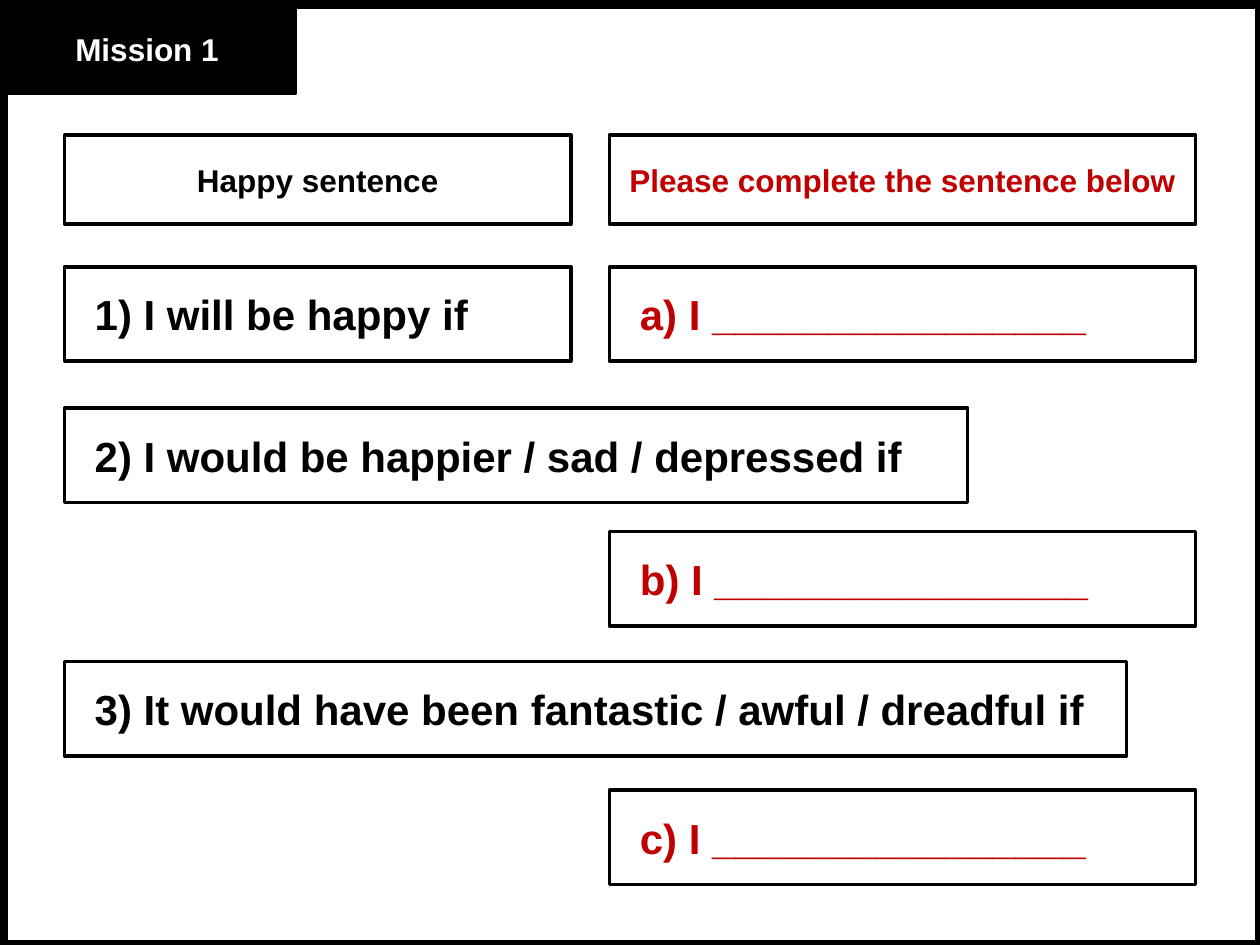
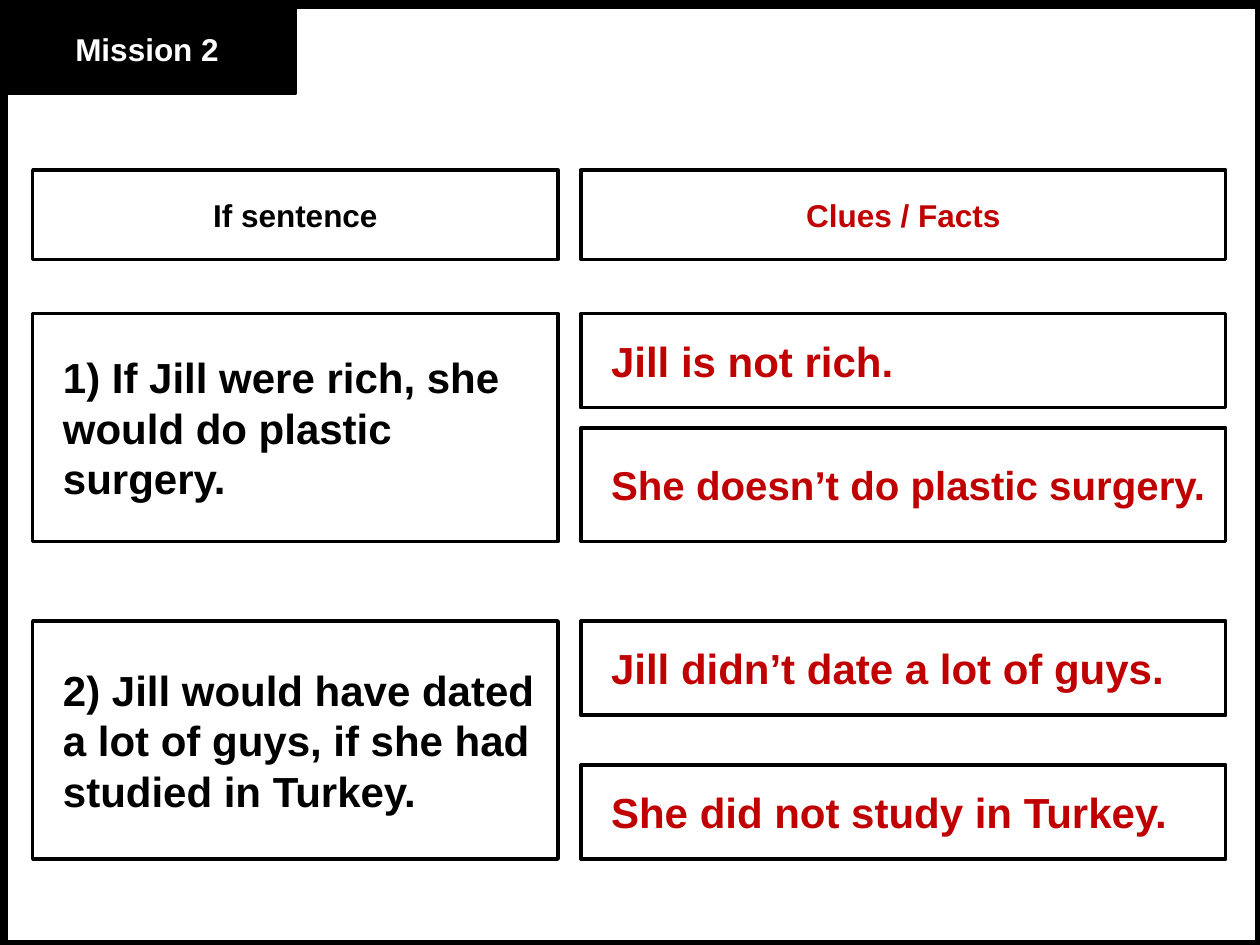
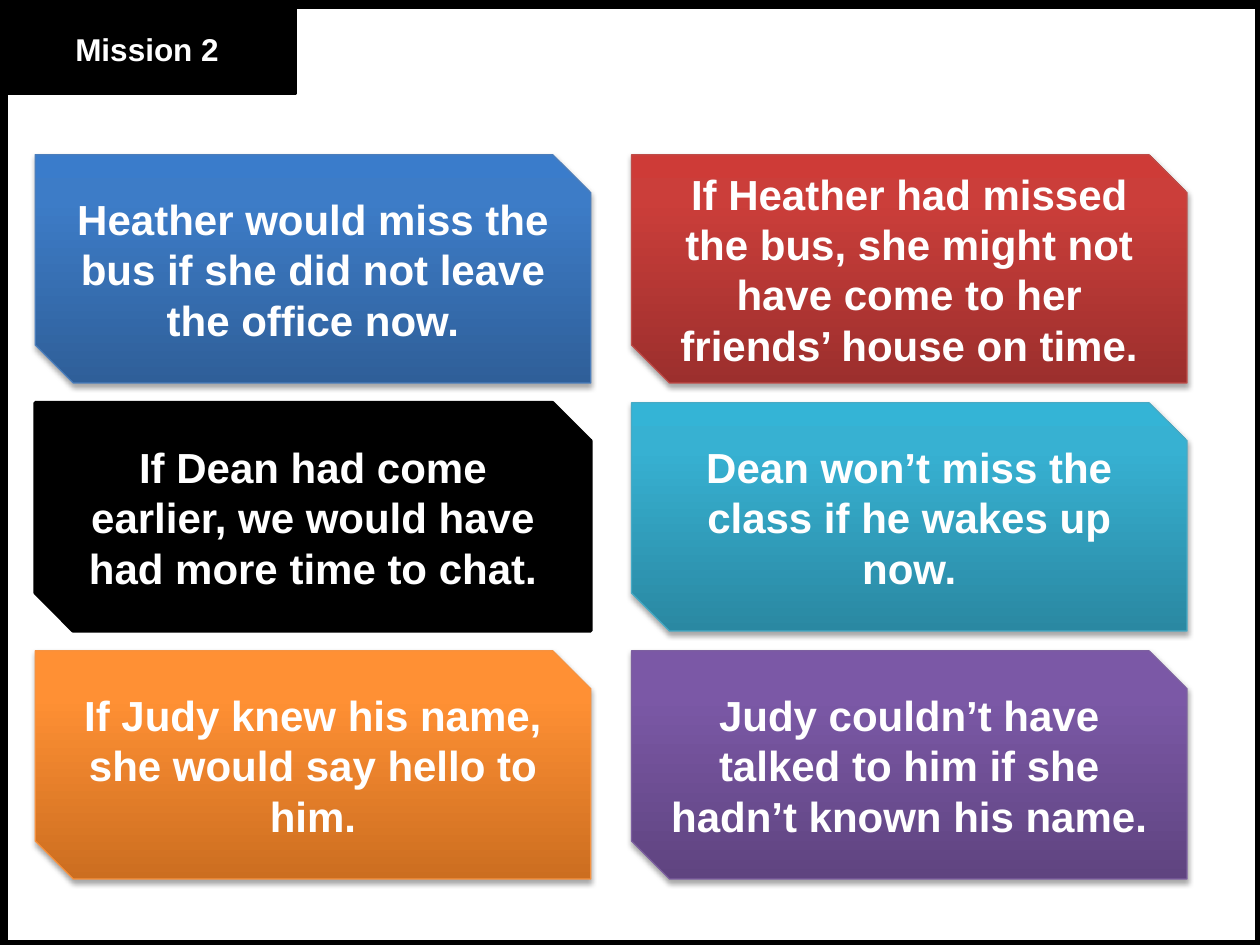
import copy

import lxml.etree
import pptx
import pptx.dml.color
import pptx.enum.shapes
import pptx.enum.text
import pptx.oxml.ns
import pptx.util

Cm = pptx.util.Cm
Pt = pptx.util.Pt
RGB = pptx.dml.color.RGBColor.from_string
qn = pptx.oxml.ns.qn
SHAPE = pptx.enum.shapes.MSO_SHAPE
ALIGN = pptx.enum.text.PP_ALIGN


class Theme:
    font = "Arial"
    black = "000000"
    white = "FFFFFF"
    red = "C00000"
    label_size = 18
    body_size = 24
    tight_size = 23
    outline = 2
    frame_outline = 6
    card_outline = 0.75
    label_height = 1.8
    row_height = 1.9
    indent = 0.61


def add_box(s, x, y, w, h, text="", color=Theme.black, fill=Theme.white, size=Theme.body_size,
            centred=False, shape=SHAPE.RECTANGLE, outline=Theme.outline):
    sp = s.shapes.add_shape(shape, Cm(x), Cm(y), Cm(w), Cm(h))
    sp.shadow.inherit = False
    sp.line.color.rgb = RGB(Theme.black)
    sp.line.width = Pt(outline)
    if fill is None:
        sp.fill.background()
    else:
        sp.fill.solid()
        sp.fill.fore_color.rgb = RGB(fill)
    if text:
        tf = sp.text_frame
        tf.word_wrap = True
        tf.vertical_anchor = pptx.enum.text.MSO_ANCHOR.MIDDLE
        tf.text = text
        p = tf.paragraphs[0]
        p.alignment = ALIGN.CENTER if centred else ALIGN.LEFT
        if not centred:
            tf.margin_left = Cm(Theme.indent)
        font = p.runs[0].font
        font.name = Theme.font
        font.size = Pt(size)
        font.bold = True
        font.color.rgb = RGB(color)
    return sp


def add_mission(prs, title):
    s = prs.slides.add_slide(prs.slide_layouts[6])
    add_box(s, 0.05, 0.08, 25.35, 18.97, fill=None, outline=Theme.frame_outline)
    add_box(s, -0.03, 0.08, 5.99, Theme.label_height, title, Theme.white, Theme.black,
            Theme.label_size, centred=True)
    return s


prs = pptx.Presentation()
prs.slide_width = Cm(25.4)
prs.slide_height = Cm(19.05)

s = add_mission(prs, "Mission 1")
prompt_x, prompt_w = 1.3, 10.21
answer_x, answer_w = 12.29, 11.81
for x, w, text, color in [
    (prompt_x, prompt_w, "Happy sentence", Theme.black),
    (answer_x, answer_w, "Please complete the sentence below", Theme.red),
]:
    add_box(s, x, 2.72, w, Theme.label_height, text, color, size=Theme.label_size, centred=True)
for prompt_y, w, prompt, answer_y, letter in [
    (5.38, prompt_w, "1) I will be happy if", 5.38, "a"),
    (8.23, 18.21, "2) I would be happier / sad / depressed if", 10.72, "b"),
    (13.34, 21.41, "3) It would have been fantastic / awful / dreadful if", 15.93, "c"),
]:
    add_box(s, prompt_x, prompt_y, w, Theme.row_height, prompt)
    add_box(s, answer_x, answer_y, answer_w, Theme.row_height, f"{letter}) I " + "_" * 16, Theme.red)

s = add_mission(prs, "Mission 2")
sentence_x, sentence_w = 0.66, 10.59
clue_x, clue_w = 11.71, 13
for x, w, text, color in [
    (sentence_x, sentence_w, "If sentence", Theme.black),
    (clue_x, clue_w, "Clues / Facts", Theme.red),
]:
    add_box(s, x, 3.43, w, Theme.label_height, text, color, size=Theme.label_size, centred=True)
for y, h, sentence, first_clue, second_clue, second_h, second_size in [
    (6.32, 4.6, "1) If Jill were rich, she would do plastic surgery.",
     "Jill is not rich.", "She doesn’t do plastic surgery.", 2.29, Theme.tight_size),
    (12.52, 4.8, "2) Jill would have dated a lot of guys, if she had studied in Turkey.",
     "Jill didn’t date a lot of guys.", "She did not study in Turkey.",
     Theme.row_height, Theme.body_size),
]:
    add_box(s, sentence_x, y, sentence_w, h, sentence)
    add_box(s, clue_x, y, clue_w, Theme.row_height, first_clue, Theme.red)
    add_box(s, clue_x, y + h - second_h, clue_w, second_h, second_clue, Theme.red, size=second_size)

s = add_mission(prs, "Mission 2")
cards = [
    ("Heather would miss the bus if she did not leave the office now.",
     ("2F5F99", "3D7CC7", "3A7CCB"), "4B7EBC"),
    ("If Heather had missed the bus, she might not have come to her friends’ house on time.",
     ("9C2F2D", "CB3E3A", "CE3B37"), "BF4C48"),
    ("If Dean had come earlier, we would have had more time to chat.", None, None),
    ("Dean won’t miss the class if he wakes up now.",
     ("2A88A2", "37B1D2", "34B4D6"), "46AAC5"),
    ("If Judy knew his name, she would say hello to him.",
     ("CC6E20", "FF9034", "FF9136"), "F69240"),
    ("Judy couldn’t have talked to him if she hadn’t known his name.",
     ("5F4480", "7B58A6", "7C57A8"), "7D60A0"),
]
for i, (text, gradient, edge) in enumerate(cards):
    row, col = divmod(i, 2)
    sp = add_box(s, 0.71 + 12.02 * col, 3.12 + 5 * row, 11.2, 4.6, text, Theme.white, Theme.black,
                 centred=True, shape=SHAPE.SNIP_2_DIAG_RECTANGLE)
    if gradient is None:
        continue
    sp.line.color.rgb = RGB(edge)
    sp.line.width = Pt(Theme.card_outline)
    sp.fill.gradient()
    sp.fill.gradient_angle = 90
    stop_list = sp.element.spPr.find(".//" + qn("a:gsLst"))
    stop_list.append(copy.deepcopy(stop_list[-1]))
    for stop, position, color in zip(sp.fill.gradient_stops, (0, 0.8, 1), gradient):
        stop.position = position
        stop.color.rgb = RGB(color)
    effects = sp.element.spPr.find(qn("a:effectLst"))
    shadow = lxml.etree.SubElement(effects, qn("a:outerShdw"), blurRad=str(Pt(3.1)),
                                   dist=str(Pt(1.8)), dir="5400000", rotWithShape="0")
    shade = lxml.etree.SubElement(shadow, qn("a:srgbClr"), val=Theme.black)
    lxml.etree.SubElement(shade, qn("a:alpha"), val="35000")

prs.save("out.pptx")
